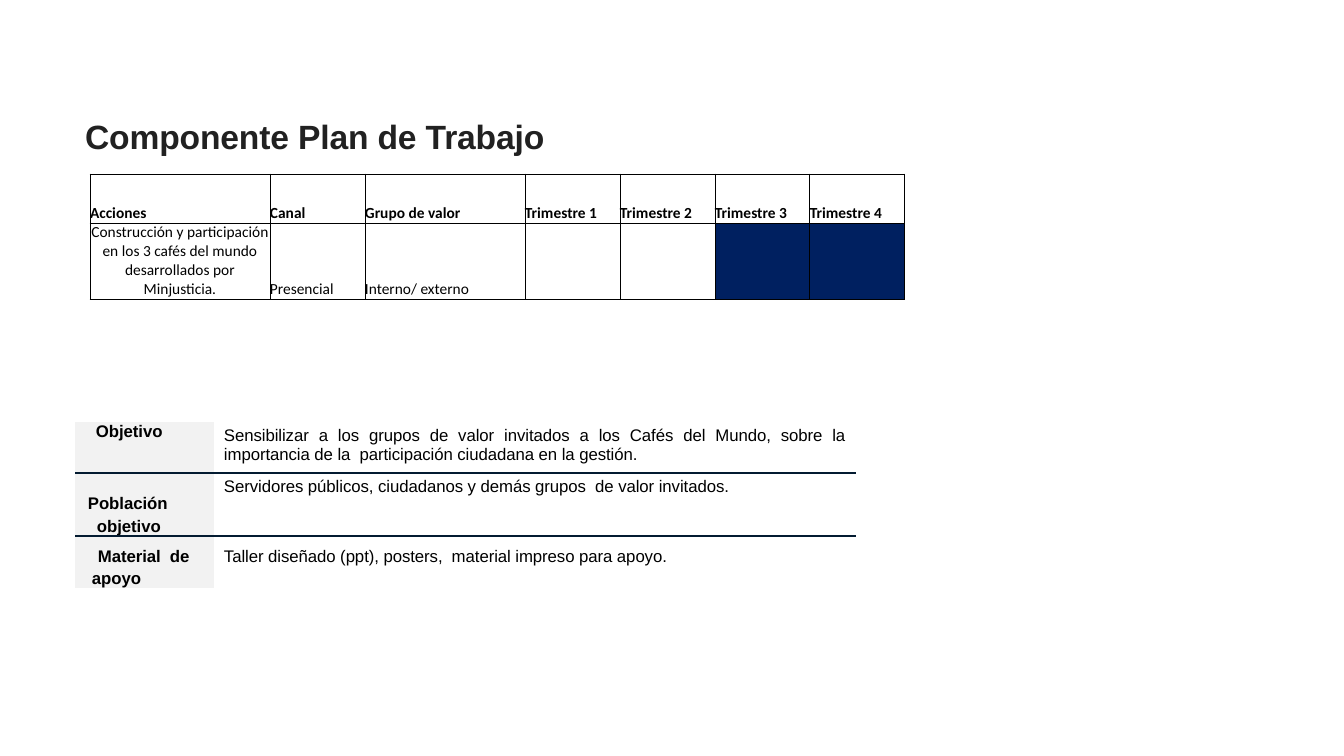
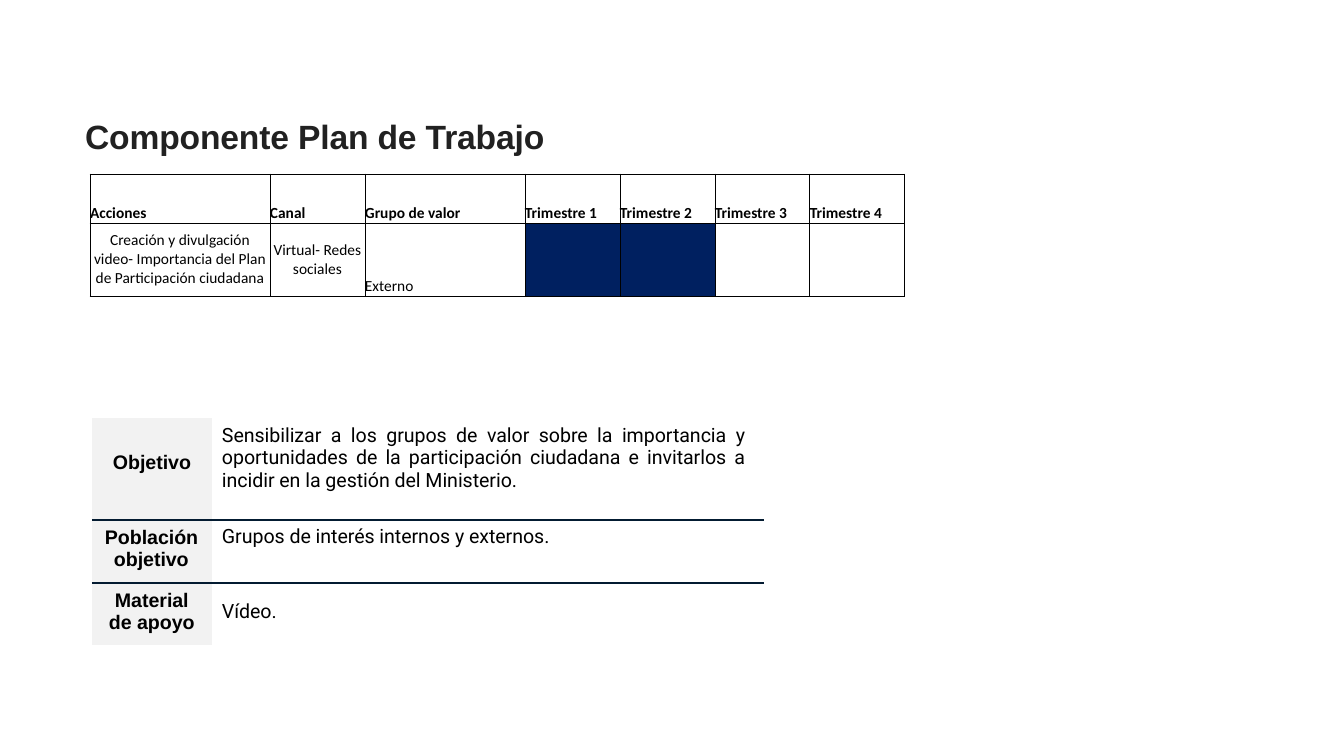
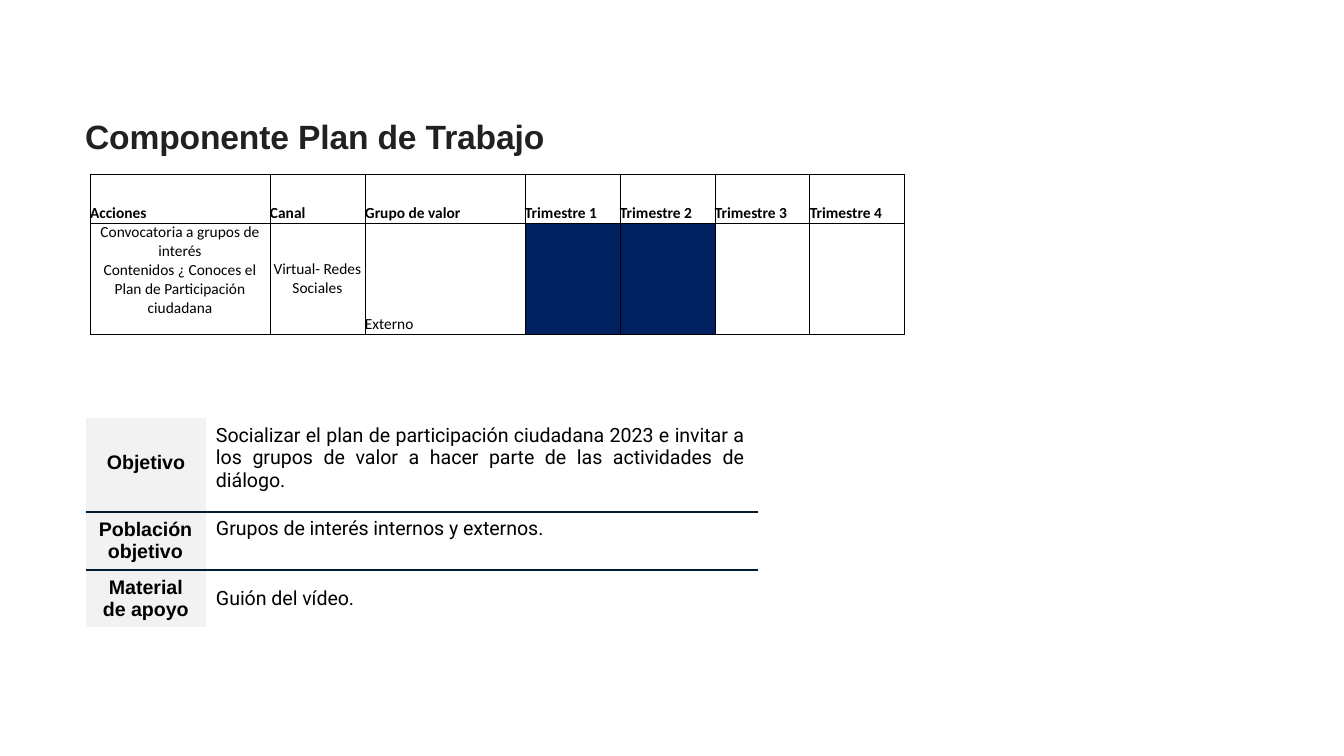
from lxml import etree
from pptx import Presentation
from pptx.dml.color import RGBColor
from pptx.enum import text
from pptx.oxml.ns import qn
from pptx.util import Emu, Pt

# Shared look
PX = 9144000 / 1008
BLACK, WHITE, TITLE_GREY = "000000", "FFFFFF", "212121"
NAVY, RULE, LABEL_GREY = "002060", "031B31", "F2F2F2"
TITLE = "Componente Plan de Trabajo"
HEADERS = ["Acciones", "Canal", "Grupo de valor"] + [f"Trimestre {n}" for n in range(1, 5)]
LABELS = ["Objetivo", "Población objetivo", "Material  de apoyo"]
LABEL_INDENTS = [(21, 0), (22, -9), (17, 6)]
PLAN_COLS = [180, 95, 160] + [95] * 4
LEFT, CENTER, JUSTIFY = (text.PP_ALIGN.LEFT, text.PP_ALIGN.CENTER, text.PP_ALIGN.JUSTIFY)
TOP, MIDDLE, BOTTOM = (text.MSO_ANCHOR.TOP, text.MSO_ANCHOR.MIDDLE, text.MSO_ANCHOR.BOTTOM)

# Details table formats: label and body insets are the top inset of each row
ARIAL_12 = dict(size=12, font="Arial", cols=[139, 642], label_tops=[0, 18, 7],
                body_tops=[5, 5, 7], label_line=Pt(16.1),
                body_lines=[0.99, 0.99, Pt(16.1)])
ROBOTO_14 = dict(size=14, font="Roboto", cols=[120, 552], label_tops=[34, 7, 7],
                 body_tops=[6, 5, 17], label_line=Pt(15.8),
                 body_lines=[0.98, None, None])

SLIDES = [
    dict(action=["Construcción y participación en los 3 cafés del mundo "
                 "desarrollados por Minjusticia."],
         channel="Presencial", channel_format=(LEFT, BOTTOM),
         group="Interno/ externo", quarters=(3, 4), plan_row=74,
         details=dict(fmt=ARIAL_12, at=(75, 422), rows=[51, 63, 52], right=10, texts=[
             "Sensibilizar a los grupos de valor invitados a los Cafés del Mundo, sobre la "
             "importancia de la  participación ciudadana en la gestión.",
             "Servidores públicos, ciudadanos y demás grupos  de valor invitados.",
             "Taller diseñado (ppt), posters,  material impreso para apoyo."])),
    dict(action=["Creación y divulgación video- Importancia del Plan de Participación ciudadana"],
         channel="Virtual- Redes sociales", channel_format=(CENTER, MIDDLE),
         group="Externo", quarters=(1, 2), plan_row=73,
         details=dict(fmt=ROBOTO_14, at=(92, 418), rows=[102, 63, 62], right=19, texts=[
             "Sensibilizar a los grupos de valor sobre la importancia y oportunidades de la "
             "participación ciudadana e invitarlos a incidir en la gestión del Ministerio.",
             "Grupos de interés internos y externos.",
             "Vídeo."])),
    dict(action=["Convocatoria a grupos de interés",
                 "Contenidos ¿ Conoces el Plan de Participación ciudadana"],
         action_anchor=TOP,
         channel="Virtual- Redes Sociales", channel_format=(CENTER, MIDDLE),
         group="Externo", quarters=(1, 2), plan_row=111,
         details=dict(fmt=ROBOTO_14, at=(86, 418), rows=[94, 58, 57], right=14, texts=[
             "Socializar el plan de participación ciudadana 2023 e invitar a los grupos de "
             "valor a hacer parte de las actividades de diálogo.",
             "Grupos de interés internos y externos.",
             "Guión del vídeo."])),
]


def px(n):
    return Emu(round(n * PX))


def color(value):
    return RGBColor.from_string(value)


def apply(obj, fmt):
    for name, value in fmt.items():
        setattr(obj, name, value)


def write(tf, lines, size, font, bold=False, ink=BLACK, align=LEFT,
          line=None, indent=(0, 0), spacing=0):
    for i, content in enumerate(lines):
        p = tf.add_paragraph() if i else tf.paragraphs[0]
        apply(p, dict(alignment=align, line_spacing=line))
        pPr = p._p.get_or_add_pPr()
        pPr.set("marL", str(px(indent[0])))
        pPr.set("indent", str(px(indent[1])))
        r = p.add_run()
        r.text = content
        apply(r.font, dict(size=Pt(size), name=font, bold=bold))
        r.font.color.rgb = color(ink)
        r._r.get_or_add_rPr().set("spc", str(spacing))


def set_cell(cell, fill=WHITE, borders=None, anchor=TOP, top=0, right=0):
    """Borders map the sides L, R, T, B to (colour, points); other sides have none."""
    apply(cell, dict(margin_left=0, margin_top=px(top), margin_right=px(right),
                     margin_bottom=0, vertical_anchor=anchor))
    tcPr = cell._tc.get_or_add_tcPr()
    for side in "LRTB":
        ln = etree.SubElement(tcPr, qn(f"a:ln{side}"))
        if side in (borders or {}):
            ink, width = borders[side]
            ln.set("w", str(Pt(width)))
            solid = etree.SubElement(ln, qn("a:solidFill"))
            etree.SubElement(solid, qn("a:srgbClr")).set("val", ink)
        else:
            etree.SubElement(ln, qn("a:noFill"))
    cell.fill.solid()
    cell.fill.fore_color.rgb = color(fill)


def add_grid(s, at, cols, rows):
    frame = s.shapes.add_table(len(rows), len(cols), px(at[0]), px(at[1]),
                               px(sum(cols)), px(sum(rows)))
    table = frame.table
    apply(table, dict(first_row=False, horz_banding=False))
    for col, width in zip(table.columns, cols):
        col.width = px(width)
    for row, height in zip(table.rows, rows):
        row.height = px(height)
    return table


def add_title(s):
    sp = s.shapes.title
    apply(sp, dict(left=px(75), top=px(111), width=px(1053), height=px(92)))
    tf = sp.text_frame
    apply(tf, dict(word_wrap=True, vertical_anchor=TOP, auto_size=text.MSO_AUTO_SIZE.NONE))
    write(tf, [TITLE], 24, "Arial", bold=True, ink=TITLE_GREY, spacing=-10)


def add_plan(s, data):
    """Work plan: the header row, then one action with its quarters shaded."""
    table = add_grid(s, (90, 174), PLAN_COLS, [49, data["plan_row"]])
    borders = {side: (BLACK, 0.5) for side in "LRTB"}
    for c, header in enumerate(HEADERS):
        cell = table.cell(0, c)
        set_cell(cell, borders=borders, anchor=BOTTOM)
        write(cell.text_frame, [header], 11, "Calibri", bold=True)

    entries = [(data["action"], CENTER, data.get("action_anchor", MIDDLE)),
               ([data["channel"]], *data["channel_format"]),
               ([data["group"]], LEFT, BOTTOM)]
    for c, (lines, align, anchor) in enumerate(entries):
        cell = table.cell(1, c)
        set_cell(cell, borders=borders, anchor=anchor)
        write(cell.text_frame, lines, 11, "Calibri", align=align)

    for quarter in range(1, 5):
        fill = NAVY if quarter in data["quarters"] else WHITE
        set_cell(table.cell(1, quarter + 2), fill, borders)


def add_details(s, fmt, at, rows, right, texts):
    """Goal, audience and material, with a rule between rows."""
    table = add_grid(s, at, fmt["cols"], rows)
    for i, body in enumerate(texts):
        sides = ("T" if i else "") + ("B" if i < len(texts) - 1 else "")
        borders = {side: (RULE, 1.5) for side in sides}
        label_cell, body_cell = table.cell(i, 0), table.cell(i, 1)
        set_cell(label_cell, LABEL_GREY, borders, top=fmt["label_tops"][i])
        write(label_cell.text_frame, [LABELS[i]], fmt["size"], "Arial", bold=True,
              line=fmt["label_line"] if i else None, indent=LABEL_INDENTS[i], spacing=-5)
        set_cell(body_cell, borders=borders, top=fmt["body_tops"][i], right=right)
        write(body_cell.text_frame, [body], fmt["size"], fmt["font"],
              align=LEFT if i else JUSTIFY, line=fmt["body_lines"][i],
              indent=(10, 0), spacing=-5)


def main():
    prs = Presentation()
    apply(prs, dict(slide_width=px(1344), slide_height=px(756)))
    for data in SLIDES:
        s = prs.slides.add_slide(prs.slide_layouts[5])
        add_title(s)
        add_plan(s, data)
        add_details(s, **data["details"])
    prs.save("out.pptx")


if __name__ == "__main__":
    main()
